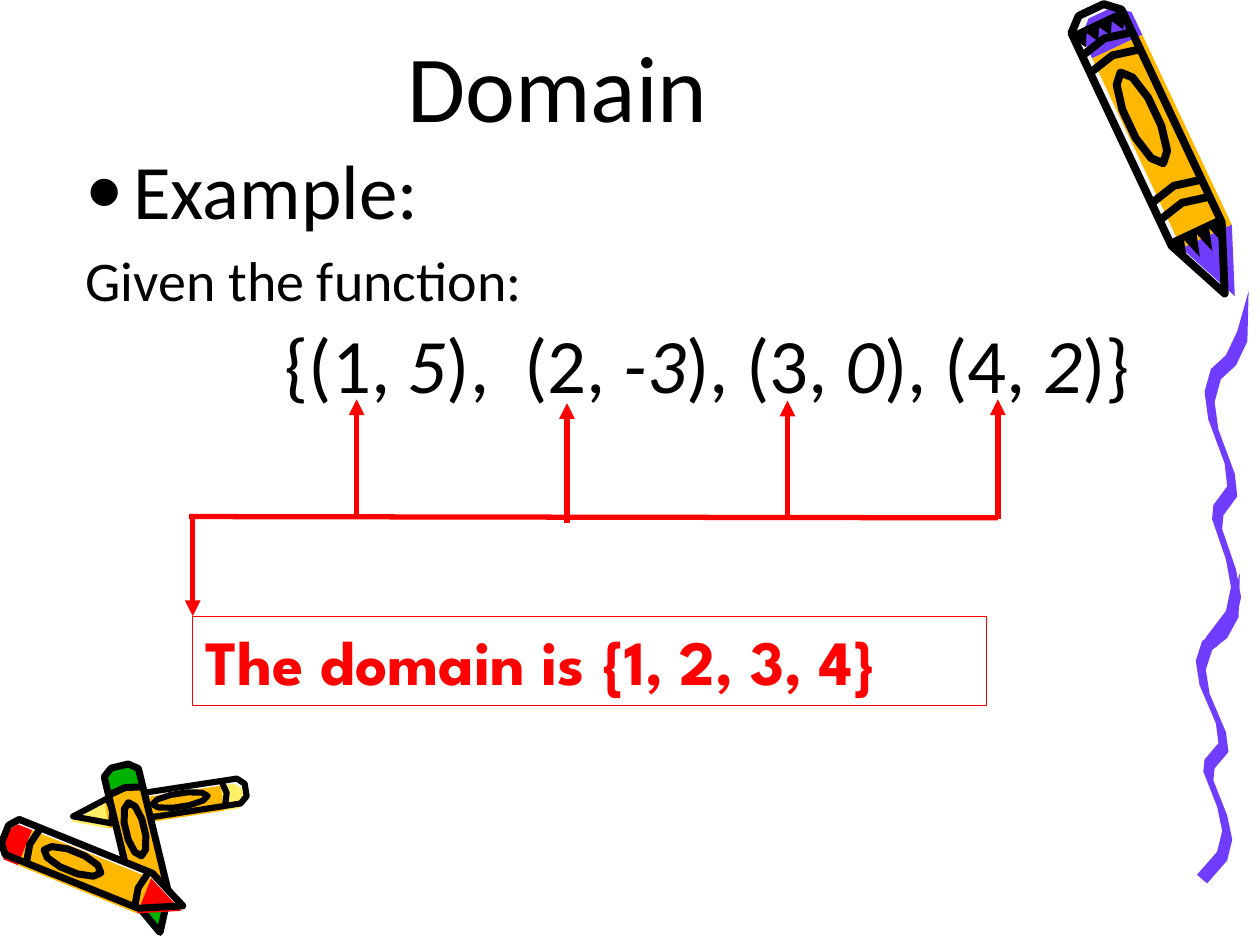
import math
from collections import namedtuple

import pptx
import pptx.dml.color
import pptx.enum.shapes
import pptx.enum.text
import pptx.oxml
import pptx.oxml.ns
import pptx.util
from pptx.util import Inches

BLACK, RED, GREEN = "000000", "FF0000", "00B200"
PURPLE, AMBER, YELLOW, PALE = "703DFF", "FFB800", "FFEF66", "F8F8F8"

Crayon = namedtuple("Crayon", "end tip width accent shift bands ink jagged")
CRAYONS = [
    Crayon((8.66, 0.08), (9.72, 2.33), 0.44, PURPLE, (0.08, 0.02), (0.12, 0.18, 0.64, 0.7), 4.5, True),
    Crayon((1.95, 6.27), (0.58, 6.48), 0.2, YELLOW, (-0.02, 0.04), (0.13, 0.79), 3.5, False),
    Crayon((0.95, 6.08), (1.27, 7.4), 0.28, GREEN, (-0.02, 0.02), (0.15, 0.79), 4, False),
    Crayon((0.04, 6.62), (1.45, 7.19), 0.3, RED, (-0.01, 0.04), (0.16, 0.77), 4, False),
]
CAP, SHOULDER = 0.12, 0.79
LABEL_CENTER, LABEL_LENGTH, LABEL_WIDTH = 0.38, 0.16, 0.27

WAVE = [(9.86, 2.67), (9.77, 2.86), (9.65, 2.97), (9.6, 3.15), (9.63, 3.37), (9.76, 3.72), (9.78, 3.9),
        (9.67, 4.05), (9.66, 4.16), (9.77, 4.48), (9.81, 4.7), (9.77, 4.89), (9.61, 5.1)]
WAVE_TOP = (9.91, 2.31)
NIB = (0.04, 0.04)


def color(value):
    return pptx.dml.color.RGBColor.from_string(value)


def add_outline(slide, points, fill=None, ink=None, closed=True):
    corners = [(Inches(x), Inches(y)) for x, y in points]
    builder = slide.shapes.build_freeform(*corners[0], scale=1.0)
    builder.add_line_segments(corners[1:], close=closed)
    outline = builder.convert_to_shape()
    outline.shadow.inherit = False
    if fill:
        outline.fill.solid()
        outline.fill.fore_color.rgb = color(fill)
    else:
        outline.fill.background()
    if ink:
        outline.line.color.rgb = color(BLACK)
        outline.line.width = pptx.util.Pt(ink)
    else:
        outline.line.fill.background()


def place(crayon, points, shift=(0, 0)):
    """Map (share of length, share of width) pairs onto the slide."""
    dx, dy = crayon.tip[0] - crayon.end[0], crayon.tip[1] - crayon.end[1]
    across = crayon.width / math.hypot(dx, dy)
    return [(crayon.end[0] + along * dx + side * across * dy + shift[0],
             crayon.end[1] + along * dy - side * across * dx + shift[1])
            for along, side in points]


def label_ring(steps=10):
    angles = [2 * math.pi * step / steps for step in range(steps)]
    return [(LABEL_CENTER + LABEL_LENGTH * math.cos(a), LABEL_WIDTH * math.sin(a)) for a in angles]


def jagged_edge(base, reach, teeth=4):
    sides = [step / (2 * teeth) - 0.5 for step in range(2 * teeth + 1)]
    zigzag = [(base + reach * (step % 2), side) for step, side in enumerate(sides)]
    return zigzag + [(base - 0.02, 0.5), (base - 0.02, -0.5)]


def add_crayon(slide, crayon):
    silhouette = [(0.04, -0.5), (0, -0.25), (0, 0.25), (0.04, 0.5),
                  (SHOULDER, 0.5), (1, 0), (SHOULDER, -0.5)]
    cap = silhouette[:4] + [(CAP, 0.5), (CAP, -0.5)]
    barrel = [(CAP, -0.5), (CAP, 0.5), (SHOULDER, 0.5), (SHOULDER, -0.5)]
    point = silhouette[4:]
    add_outline(slide, place(crayon, silhouette), PALE)
    for part, fill in ((cap, crayon.accent), (barrel, AMBER), (point, crayon.accent)):
        add_outline(slide, place(crayon, part, crayon.shift), fill)
    if crayon.jagged:
        for base, reach in ((0.06, 0.04), (SHOULDER, 0.07)):
            add_outline(slide, place(crayon, jagged_edge(base, reach)), BLACK)
    for band in crayon.bands:
        bow = [(band, -0.5), (band - 0.02, 0), (band, 0.5)]
        add_outline(slide, place(crayon, bow), ink=crayon.ink, closed=False)
    for ring in (silhouette, label_ring()):
        add_outline(slide, place(crayon, ring), ink=crayon.ink)


def add_squiggle(slide, left_shift=0, top=WAVE_TOP[1], stretch=1):
    def edge(side):
        return [(x + side * NIB[0], y + side * NIB[1]) for x, y in WAVE]

    ribbon = [WAVE_TOP] + edge(1) + edge(-1)[::-1]
    add_outline(slide, [(x - left_shift, top + (y - WAVE_TOP[1]) * stretch) for x, y in ribbon], PURPLE)


def add_line(slide, start, end, arrow=False):
    line = slide.shapes.add_connector(
        pptx.enum.shapes.MSO_CONNECTOR.STRAIGHT, *map(Inches, start + end))
    line.line.color.rgb = color(RED)
    line.line.width = pptx.util.Pt(3)
    if arrow:
        pptx.oxml.ns.qn("a:headEnd")
        head = line._element.makeelement(pptx.oxml.ns.qn("a:headEnd"), {"type": "triangle"})
        line.line._get_or_add_ln().append(head)
    line._element.spPr.append(line._element.makeelement(pptx.oxml.ns.qn("a:effectLst"), {}))


def add_run(paragraph, text, size, stroke=BLACK, font="Calibri", bold=False, italic=False):
    run = paragraph.add_run()
    run.text = text
    run.font.size = pptx.util.Pt(size)
    run.font.name = font
    run.font.color.rgb = color(stroke)
    run.font.bold = bold
    run.font.italic = italic


def add_text_frame(slide, left, top, width, height, wrap=True):
    frame = slide.shapes.add_textbox(*map(Inches, (left, top, width, height))).text_frame
    frame.word_wrap = wrap
    return frame


def add_bullet(paragraph, indent):
    properties = paragraph._p.get_or_add_pPr()
    properties.set("marL", str(Inches(indent)))
    properties.set("indent", str(-Inches(indent)))
    for tag, attributes in (("a:buFont", {"typeface": "Calibri"}), ("a:buChar", {"char": "•"})):
        properties.append(properties.makeelement(pptx.oxml.ns.qn(tag), attributes))


def add_heading(slide):
    title = add_text_frame(slide, 0.67, 0.25, 7.51, 0.92)
    title.vertical_anchor = pptx.enum.text.MSO_ANCHOR.BOTTOM
    title.paragraphs[0].alignment = pptx.enum.text.PP_ALIGN.CENTER
    add_run(title.paragraphs[0], "Domain", 54)


def add_example(slide):
    body = add_text_frame(slide, 0.58, 1.08, 8.42, 5.75)
    example, given = body.paragraphs[0], body.add_paragraph()
    for paragraph, text, size in ((example, "Example:", 44), (given, "Given the function:", 32)):
        paragraph.space_before = pptx.util.Pt(size * 0.2)
        add_run(paragraph, text, size)
    add_bullet(example, 0.38)


def add_function(slide):
    pairs = add_text_frame(slide, 2.16, 2.46, 6.98, 0.84, wrap=False)
    pieces = ("{(1, ", "5", "),  (2, ", "-3", "), (3, ", "0", "), (4, ", "2", ")}")
    for index, piece in enumerate(pieces):
        add_run(pairs.paragraphs[0], piece, 44, italic=index % 2 == 1)


def add_answer(slide):
    answer = slide.shapes.add_shape(
        pptx.enum.shapes.MSO_SHAPE.RECTANGLE, *map(Inches, (1.53, 4.89, 6.3, 0.71)))
    answer.shadow.inherit = False
    answer.fill.background()
    answer.line.color.rgb = color(RED)
    answer.line.width = pptx.util.Pt(0.75)
    answer.text_frame.word_wrap = True
    answer.text_frame.vertical_anchor = pptx.enum.text.MSO_ANCHOR.TOP
    sentence = answer.text_frame.paragraphs[0]
    sentence.alignment = pptx.enum.text.PP_ALIGN.LEFT
    add_run(sentence, "The domain is {1, 2, 3, 4}", 36, RED, "League Spartan", bold=True)


def main():
    deck = pptx.Presentation()
    deck.slide_width, deck.slide_height = Inches(10), Inches(7.5)
    slide = deck.slides.add_slide(deck.slide_layouts[6])
    for crayon in CRAYONS:
        add_crayon(slide, crayon)
    add_squiggle(slide, left_shift=0.07, top=4.55, stretch=0.87)
    add_squiggle(slide)
    add_heading(slide)
    add_example(slide)
    add_function(slide)
    for x, tip in ((2.83, 3.17), (4.5, 3.2), (6.25, 3.18), (7.92, 3.17)):
        add_line(slide, (x, tip), (x, tip + 0.95), arrow=True)
    add_line(slide, (1.5, 4.1), (7.92, 4.11))
    add_answer(slide)
    add_line(slide, (1.53, 4.89), (1.53, 4.12), arrow=True)
    deck.save("out.pptx")


if __name__ == "__main__":
    main()
